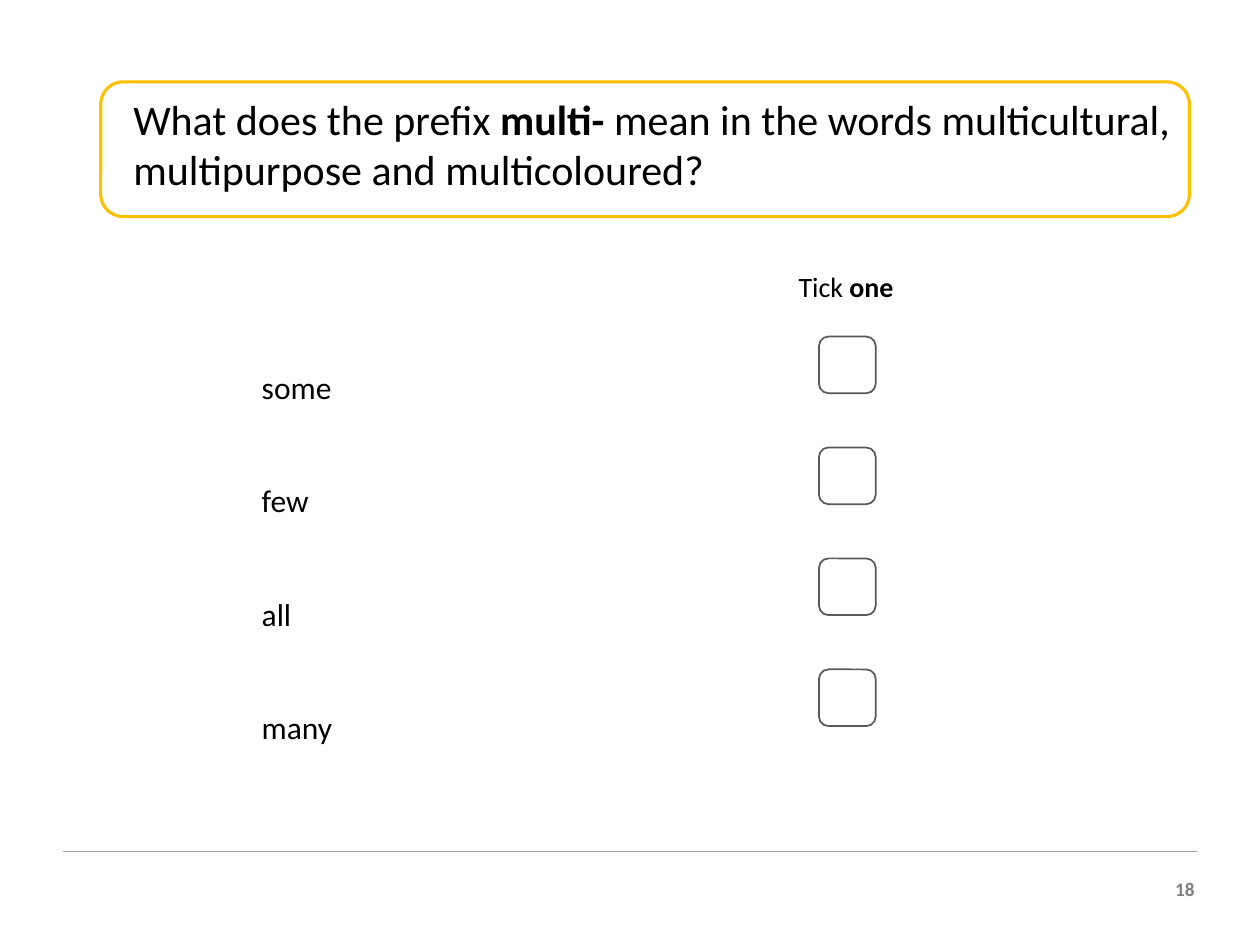
from dataclasses import dataclass

from lxml.etree import SubElement
from pptx import Presentation
from pptx.dml.color import RGBColor
from pptx.enum.shapes import MSO_CONNECTOR as Connector, MSO_SHAPE as Shape
from pptx.enum.text import MSO_ANCHOR as Anchor, PP_ALIGN as Align
from pptx.oxml.ns import qn
from pptx.util import Pt


@dataclass(frozen=True)
class Theme:
    font: str = "Calibri"
    text: str = "000000"
    paper: str = "FFFFFF"
    accent: str = "FFC000"
    tick_border: str = "595959"
    rule: str = "A5A5A5"
    footer: str = "7F7F7F"
    question_size: int = 24
    answer_size: int = 18
    hint_size: int = 16
    footer_size: int = 11


class QuizPage:
    def __init__(self, page, theme):
        self.page = page
        self.theme = theme

    def panel(self, kind, left, top, width, height, border=None, weight=1):
        box = self.page.shapes.add_shape(kind, Pt(left), Pt(top), Pt(width), Pt(height))
        box.shadow.inherit = False
        box.fill.solid()
        box.fill.fore_color.rgb = RGBColor.from_string(self.theme.paper)
        if border:
            box.line.color.rgb = RGBColor.from_string(border)
            box.line.width = Pt(weight)
        else:
            box.line.fill.background()
        return box

    def text_box(self, left, top, width, height):
        return self.page.shapes.add_textbox(Pt(left), Pt(top), Pt(width), Pt(height))

    def add_text(self, box, paragraphs, size, color=None, align=Align.LEFT, spacing=None, wrap=False):
        """Fill a box with paragraphs, each a list of (text, bold) runs."""
        frame = box.text_frame
        frame.word_wrap = wrap
        frame.vertical_anchor = Anchor.TOP
        for index, runs in enumerate(paragraphs):
            para = frame.add_paragraph() if index else frame.paragraphs[0]
            para.alignment = align
            if spacing:
                para.line_spacing = spacing
            for text, bold in runs:
                span = para.add_run()
                span.text = text
                span.font.name = self.theme.font
                span.font.size = Pt(size)
                span.font.bold = bold
                span.font.color.rgb = RGBColor.from_string(color or self.theme.text)

    def rule(self, left, right, y):
        line = self.page.shapes.add_connector(Connector.STRAIGHT, Pt(left), Pt(y), Pt(right), Pt(y))
        line.line.color.rgb = RGBColor.from_string(self.theme.rule)
        line.line.width = Pt(0.75)
        SubElement(line._element.spPr, qn("a:effectLst"))


def main():
    theme = Theme()
    deck = Presentation()
    deck.slide_width, deck.slide_height = Pt(720), Pt(540)
    quiz = QuizPage(deck.slides.add_slide(deck.slide_layouts[6]), theme)

    page_number = quiz.text_box(662.4, 497.5, 27.4, 20.9)
    quiz.add_text(page_number, [[("18", True)]], theme.footer_size, theme.footer, Align.RIGHT)
    quiz.rule(36, 684, 486.7)

    answers = ["some", "few", "all", "many"]
    answer_list = quiz.text_box(142.5, 163.4, 54.7, 257.8)
    quiz.add_text(answer_list, [[(answer, False)] for answer in answers], theme.answer_size, spacing=3.0)

    tick_top, tick_pitch, tick_side = 192.3, 63.4, 32.4
    for row in range(len(answers)):
        quiz.panel(Shape.ROUNDED_RECTANGLE, 468, tick_top + row * tick_pitch,
                   tick_side, tick_side, theme.tick_border)

    hint = quiz.panel(Shape.RECTANGLE, 449.3, 150.5, 69.1, 26.6)
    quiz.add_text(hint, [[("Tick ", False), ("one", True)]], theme.hint_size)

    quiz.panel(Shape.ROUNDED_RECTANGLE, 57.6, 46.8, 622.1, 77, theme.accent, 1.75)
    question = quiz.text_box(69.1, 49.7, 622.1, 65.5)
    quiz.add_text(question, [[
        ("What does the prefix ", False),
        ("multi- ", True),
        ("mean in the words multicultural, multipurpose and multicoloured?", False),
    ]], theme.question_size, wrap=True)

    deck.save("out.pptx")


if __name__ == "__main__":
    main()
